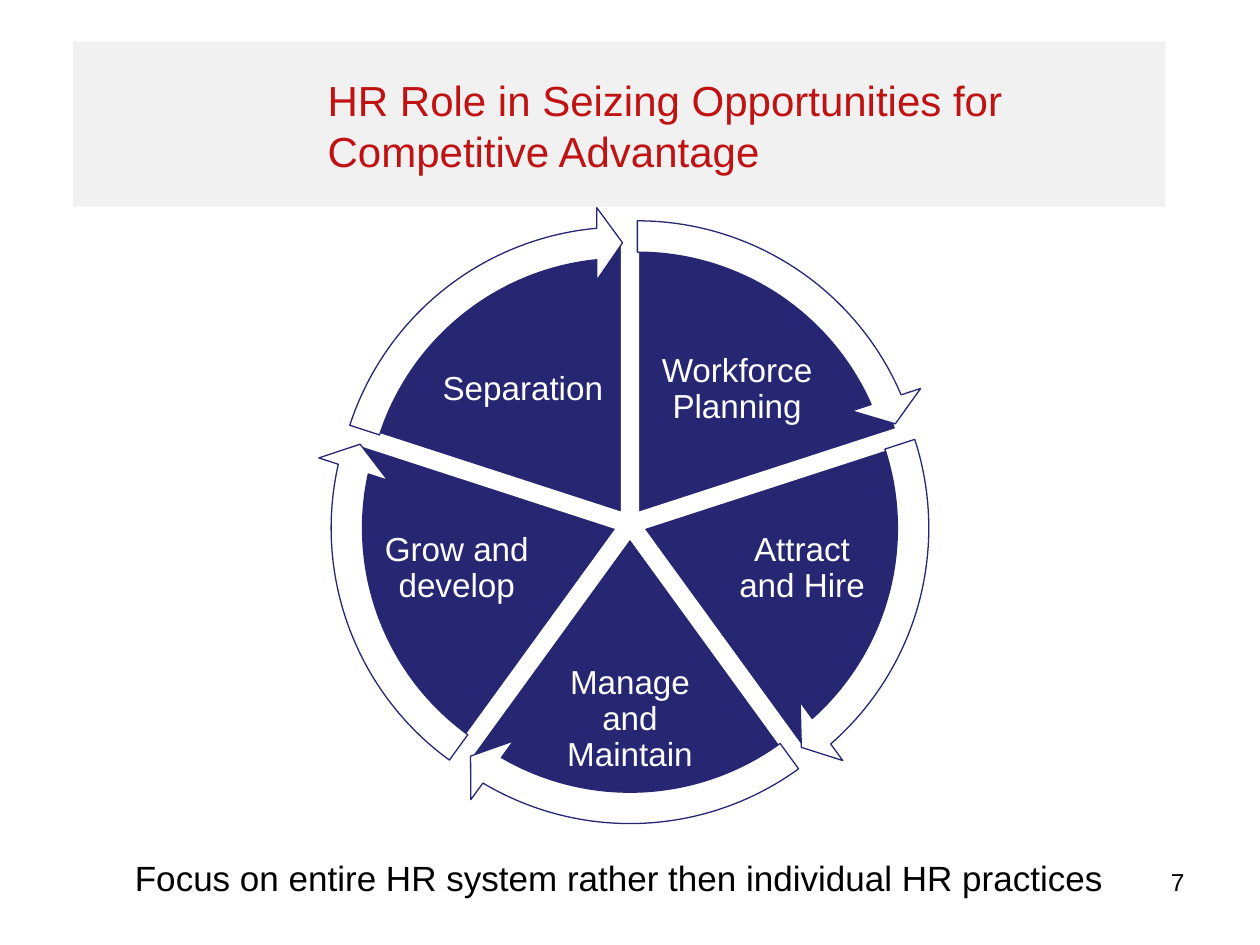
from math import cos, sin, radians
from lxml.etree import SubElement
from pptx import Presentation
from pptx.dml.color import RGBColor
from pptx.enum.shapes import MSO_SHAPE
from pptx.enum.text import MSO_ANCHOR, MSO_AUTO_SIZE, PP_ALIGN
from pptx.oxml.ns import qn
from pptx.util import Inches, Pt

TITLE = "HR Role in Seizing Opportunities for Competitive Advantage"
FOCUS = "Focus on entire HR system rather then individual HR practices"
PAGE = "7"
STEPS = [
    ("Workforce Planning", (5.15, 2.63, 1.4, 0.93), 0.05),
    ("Attract and Hire", (5.72, 4, 1.29, 1.03), 0),
    ("Manage and Maintain", (4.38, 5.14, 1.24, 1.14), 0),
    ("Grow and develop", (2.98, 4, 1.29, 1.03), 0),
    ("Separation", (3.45, 2.63, 1.4, 0.93), 0),
]
NAVY, WHITE, BLACK, RED, GREY = "262673", "FFFFFF", "000000", "C01212", "EAEAEA"
MID, GAP, PIE, RING = (5, 4.16), 0.1, 4.34, 4.88
TURN, TOP, HEAD = 216, 162, 3.275
SWEEP = TURN / len(STEPS)


def color(hue):
    return RGBColor.from_string(hue)


def style(obj, **vals):
    for key, val in vals.items():
        setattr(obj, key, val)


def draw(home, kind, box, fill, line=None, width=0, adj=()):
    shape = home.add_shape(kind, *map(Inches, box))
    shape.shadow.inherit = False
    shape.fill.solid()
    shape.fill.fore_color.rgb = color(fill)
    if line:
        shape.line.color.rgb = color(line)
        shape.line.width = Pt(width)
    else:
        shape.line.fill.background()
    for n, val in enumerate(adj):
        shape.adjustments[n] = val
    return shape


def write(shape, text, size, hue, align, **frame):
    style(shape.text_frame, word_wrap=True, **frame)
    para = shape.text_frame.paragraphs[0]
    para.text = text
    para.alignment = align
    style(para.font, name="Arial", size=Pt(size))
    para.font.color.rgb = color(hue)
    return para


def label(home, box, *args, **frame):
    return write(home.add_textbox(*map(Inches, box)), *args, **frame)


def square(size, angle, lift=0):
    x = MID[0] + GAP * cos(angle) - size / 2
    y = MID[1] + GAP * sin(angle) - size / 2 - lift
    return x, y, size, size


deck = Presentation()
style(deck, slide_width=Inches(10), slide_height=Inches(7.5))
slide = deck.slides.add_slide(deck.slide_layouts[5])
shapes = slide.shapes

panel = draw(shapes, MSO_SHAPE.RECTANGLE, (0.58, 0.33, 8.67, 1.31), GREY)
tone = panel._element.spPr.find(qn("a:solidFill"))[0]
SubElement(tone, qn("a:alpha")).set("val", "65000")
shapes._spTree.insert(2, panel._element)

label(shapes, (7.17, 6.83, 2.33, 0.52), PAGE, 14, BLACK, PP_ALIGN.RIGHT)
head = shapes.title
style(head, left=Inches(2.5), top=Inches(0.37), width=Inches(6.75), height=Inches(1.25))
write(head, TITLE, 24, RED, PP_ALIGN.LEFT,
      vertical_anchor=MSO_ANCHOR.MIDDLE, auto_size=MSO_AUTO_SIZE.NONE)

wheel = shapes.add_group_shape().shapes
sides = ("left", "top", "right", "bottom")
inset = {f"margin_{side}": Inches(0.03) for side in sides}
rings = []
for n, (text, box, lift) in enumerate(STEPS):
    start = (TOP + n * SWEEP) % TURN
    end = (start + SWEEP) % TURN
    angle = radians((start + SWEEP / 2) * 360 / TURN)
    draw(wheel, MSO_SHAPE.PIE, square(PIE, angle), NAVY, WHITE, 2, (start, end))
    para = label(wheel, box, text, 19, WHITE, PP_ALIGN.CENTER,
                 vertical_anchor=MSO_ANCHOR.MIDDLE, **inset)
    para.line_spacing = 0.9
    rings.append((square(RING, angle, lift), (0.051, HEAD, end - HEAD, start, 0.059)))
for box, adj in rings:
    draw(wheel, MSO_SHAPE.CIRCULAR_ARROW, box, WHITE, NAVY, 0.75, adj)

label(shapes, (0.75, 6.75, 8.33, 0.44), FOCUS, 20, BLACK, PP_ALIGN.CENTER,
      auto_size=MSO_AUTO_SIZE.SHAPE_TO_FIT_TEXT)
deck.save("out.pptx")
